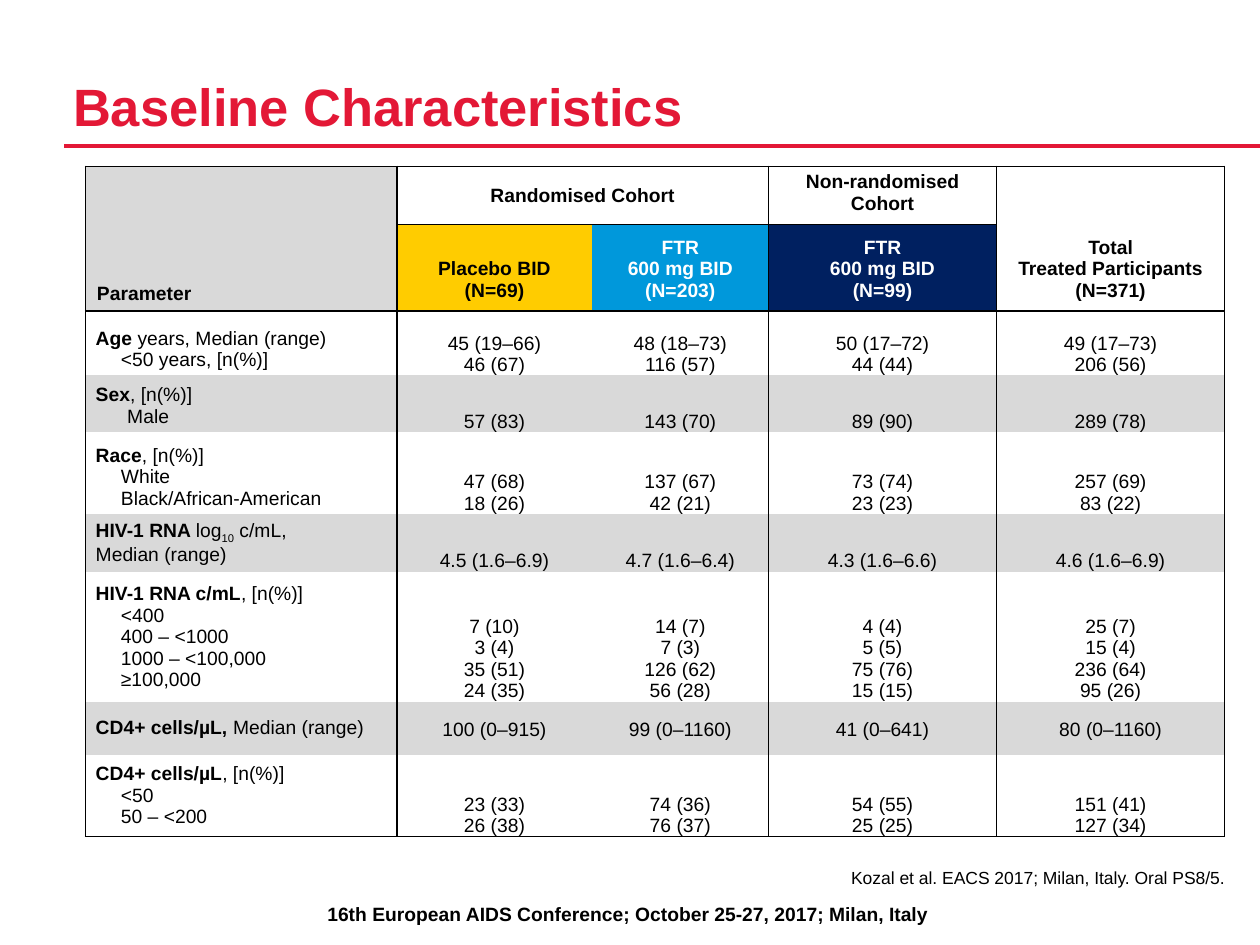
from pptx import Presentation
from pptx import util as u
from pptx.dml.color import RGBColor
from pptx.enum import shapes, text
from pptx.oxml import ns
from lxml import etree

COLORS = {"red": "E31836", "black": "000000", "white": "FFFFFF", "grey": "D9D9D9",
          "yellow": "FFCC00", "blue": "0098DB", "navy": "002060"}
TOP, MIDDLE, BOTTOM = (text.MSO_ANCHOR.TOP, text.MSO_ANCHOR.MIDDLE,
                       text.MSO_ANCHOR.BOTTOM)
LEFT, CENTER, RIGHT = text.PP_ALIGN.LEFT, text.PP_ALIGN.CENTER, text.PP_ALIGN.RIGHT

COLUMN_WIDTHS = [2.47, 1.55, 1.4, 1.81, 1.81]
ROW_HEIGHTS = [0.46, 0.69, 0.51, 0.45, 0.65, 0.46, 1.03, 0.42, 0.65]
HEADER_MARGINS = (0.04, 0.04, 0.04, 0.08)
LABEL_MARGINS = (0.08, 0.04, 0, 0.04)
VALUE_MARGINS = (0.07, 0, 0.07, 0)

# row, column, lines, fill, font colour, anchor, margins
HEADERS = [
    (0, 0, ["Parameter"], "grey", "black", BOTTOM, (0.09, 0.05, 0.09, 0.05)),
    (0, 1, ["Randomised Cohort"], None, "black", MIDDLE, (0.1, 0.04, 0.1, 0.04)),
    (0, 3, ["Non-randomised Cohort"], None, "black", BOTTOM, HEADER_MARGINS),
    (0, 4, ["Total", "Treated Participants", "(N=371)"], None, "black", BOTTOM,
     HEADER_MARGINS),
    (1, 1, ["Placebo BID", "(N=69)"], "yellow", "black", BOTTOM, HEADER_MARGINS),
    (1, 2, ["FTR", "600 mg BID (N=203)"], "blue", "white", BOTTOM, HEADER_MARGINS),
    (1, 3, ["FTR", "600 mg BID", "(N=99)"], "navy", "white", BOTTOM, HEADER_MARGINS),
]

# bold label, plain label (subscript between bars), sublabels, indent,
# label anchor, values for each column
PARAMETERS = [
    ("Age", " years, Median (range)", ["<50 years, [n(%)]"], 0.2, BOTTOM,
     [["45 (19–66)", "46 (67)"], ["48 (18–73)", "116 (57)"],
      ["50 (17–72)", "44 (44)"], ["49 (17–73)", "206 (56)"]]),
    ("Sex", ", [n(%)]", ["Male"], 0.25, BOTTOM,
     [["57 (83)"], ["143 (70)"], ["89 (90)"], ["289 (78)"]]),
    ("Race", ", [n(%)]", ["White", "Black/African-American"], 0.2, BOTTOM,
     [["47 (68)", "18 (26)"], ["137 (67)", "42 (21)"],
      ["73 (74)", "23 (23)"], ["257 (69)", "83 (22)"]]),
    ("HIV-1 RNA ", "log|10| c/mL,", ["Median (range)"], 0, MIDDLE,
     [["4.5 (1.6–6.9)"], ["4.7 (1.6–6.4)"], ["4.3 (1.6–6.6)"], ["4.6 (1.6–6.9)"]]),
    ("HIV-1 RNA c/mL", ", [n(%)]",
     ["<400", "400 – <1000", "1000 – <100,000", "≥100,000"], 0.2, MIDDLE,
     [["7 (10)", "3 (4)", "35 (51)", "24 (35)"],
      ["14 (7)", "7 (3)", "126 (62)", "56 (28)"],
      ["4 (4)", "5 (5)", "75 (76)", "15 (15)"],
      ["25 (7)", "15 (4)", "236 (64)", "95 (26)"]]),
    ("CD4+ cells/µL, ", "Median (range)", [], 0, MIDDLE,
     [["100 (0–915)"], ["99 (0–1160)"], ["41 (0–641)"], ["80 (0–1160)"]]),
    ("CD4+ cells/µL", ", [n(%)]", ["<50", "50 – <200"], 0.2, MIDDLE,
     [["23 (33)", "26 (38)"], ["74 (36)", "76 (37)"],
      ["54 (55)", "25 (25)"], ["151 (41)", "127 (34)"]]),
]


def rgb(name):
    return RGBColor.from_string(COLORS[name])


def format_paragraph(para, size, color="black", bold=False, align=LEFT, indent=0):
    properties = para._p.get_or_add_pPr()
    properties.set("marL", str(u.Inches(indent)))
    properties.set("indent", "0")
    etree.SubElement(properties, ns.qn("a:buNone"))
    para.alignment = align
    para.space_before = u.Pt(0)
    font = para.font
    font.name, font.size, font.bold = "Arial", u.Pt(size), bold
    font.color.rgb = rgb(color)


def fill_box(box, area, wording, anchor, margin=0, **style):
    box.left, box.top, box.width, box.height = [u.Inches(n) for n in area]
    frame = box.text_frame
    frame.word_wrap = True
    frame.auto_size = text.MSO_AUTO_SIZE.NONE
    frame.vertical_anchor = anchor
    frame.margin_left = frame.margin_right = u.Inches(margin)
    frame.margin_top = frame.margin_bottom = u.Inches(margin / 2)
    para = frame.paragraphs[0]
    para.text = wording
    format_paragraph(para, **style)
    return para


def add_rule(page):
    rule = page.shapes.add_connector(shapes.MSO_CONNECTOR.STRAIGHT, u.Inches(0.51),
                                     u.Inches(1.16), u.Inches(10), u.Inches(1.16))
    rule.line.color.rgb = rgb("red")
    rule.line.width = u.Pt(2)
    etree.SubElement(rule._element.spPr, ns.qn("a:effectLst"))


def set_borders(cell, row, column):
    """Frame the header and the columns; the randomised pair has no divider."""
    last = len(ROW_HEIGHTS) - 1
    visible = {"lnL": column != 2, "lnR": column != 1,
               "lnT": row <= 2, "lnB": row in (0, 1, last)}
    properties = cell._tc.get_or_add_tcPr()
    for side, shown in visible.items():
        line = etree.SubElement(properties, ns.qn("a:" + side), w=str(u.Pt(1)))
        if shown:
            solid = etree.SubElement(line, ns.qn("a:solidFill"))
            etree.SubElement(solid, ns.qn("a:srgbClr"), val=COLORS["black"])
        else:
            etree.SubElement(line, ns.qn("a:noFill"))


def set_cell(cell, fill, anchor, margins):
    if fill:
        cell.fill.solid()
        cell.fill.fore_color.rgb = rgb(fill)
    else:
        cell.fill.background()
    cell.vertical_anchor = anchor
    (cell.margin_left, cell.margin_top,
     cell.margin_right, cell.margin_bottom) = [u.Inches(n) for n in margins]


def write_lines(cell, lines, **style):
    cell.text = "\n".join(lines)
    for para in cell.text_frame.paragraphs:
        format_paragraph(para, 11, **style)


def write_label(cell, strong, plain, sublabels, indent):
    write_lines(cell, [strong] + sublabels, indent=indent)
    heading = cell.text_frame.paragraphs[0]
    heading._p.get_or_add_pPr().set("marL", "0")
    heading.runs[0].font.bold = True
    for index, part in enumerate(plain.split("|")):
        span = heading.add_run()
        span.text = part
        if index % 2:
            span._r.get_or_add_rPr().set("baseline", "-25000")


def add_baseline_table(page):
    frame = page.shapes.add_table(
        len(ROW_HEIGHTS), len(COLUMN_WIDTHS), u.Inches(0.68), u.Inches(1.32),
        u.Inches(sum(COLUMN_WIDTHS)), u.Inches(sum(ROW_HEIGHTS)))
    table = frame.table
    table.first_row = table.horz_banding = False
    for column, width in zip(table.columns, COLUMN_WIDTHS):
        column.width = u.Inches(width)
    for index, height in enumerate(ROW_HEIGHTS):
        table.rows[index].height = u.Inches(height)
        for column in range(len(COLUMN_WIDTHS)):
            set_borders(table.cell(index, column), index, column)

    # Header rows
    for first, last in [((0, 0), (1, 0)), ((0, 1), (0, 2)), ((0, 4), (1, 4))]:
        table.cell(*first).merge(table.cell(*last))
    for row, column, lines, fill, color, anchor, margins in HEADERS:
        cell = table.cell(row, column)
        set_cell(cell, fill, anchor, margins)
        write_lines(cell, lines, color=color, bold=True,
                    align=CENTER if column else LEFT)

    # Parameter rows, every second one shaded
    for row, (strong, plain, sublabels, indent, anchor, values) in enumerate(PARAMETERS, 2):
        fill = "grey" if row % 2 else None
        label = table.cell(row, 0)
        set_cell(label, fill, anchor, LABEL_MARGINS)
        write_label(label, strong, plain, sublabels, indent)
        for column, lines in enumerate(values, 1):
            cell = table.cell(row, column)
            set_cell(cell, fill, BOTTOM if sublabels else MIDDLE, VALUE_MARGINS)
            write_lines(cell, lines, align=CENTER)
            if not sublabels:
                cell.text_frame.paragraphs[0].line_spacing = 1.15


def main():
    deck = Presentation()
    deck.slide_width, deck.slide_height = u.Inches(10), u.Inches(7.5)
    page = deck.slides.add_slide(deck.slide_layouts[1])

    # Title and rule
    title = fill_box(page.shapes.title, (0.58, 0.17, 8.25, 0.92),
                     "Baseline Characteristics", BOTTOM, size=30, color="red", bold=True)
    title.line_spacing = u.Pt(35)
    add_rule(page)

    add_baseline_table(page)

    # Citation and conference footer
    fill_box(page.placeholders[1], (0.58, 6.88, 9.14, 0.2),
             "Kozal et al. EACS 2017; Milan, Italy. Oral PS8/5.", TOP,
             size=10, align=RIGHT)
    footer = page.shapes.add_textbox(0, 0, 0, 0)
    fill_box(footer, (0.06, 7.11, 9.85, 0.29),
             "16th European AIDS Conference; October 25-27, 2017; Milan, Italy", TOP,
             margin=0.1, size=11, bold=True, align=CENTER)
    deck.save("out.pptx")


if __name__ == "__main__":
    main()
